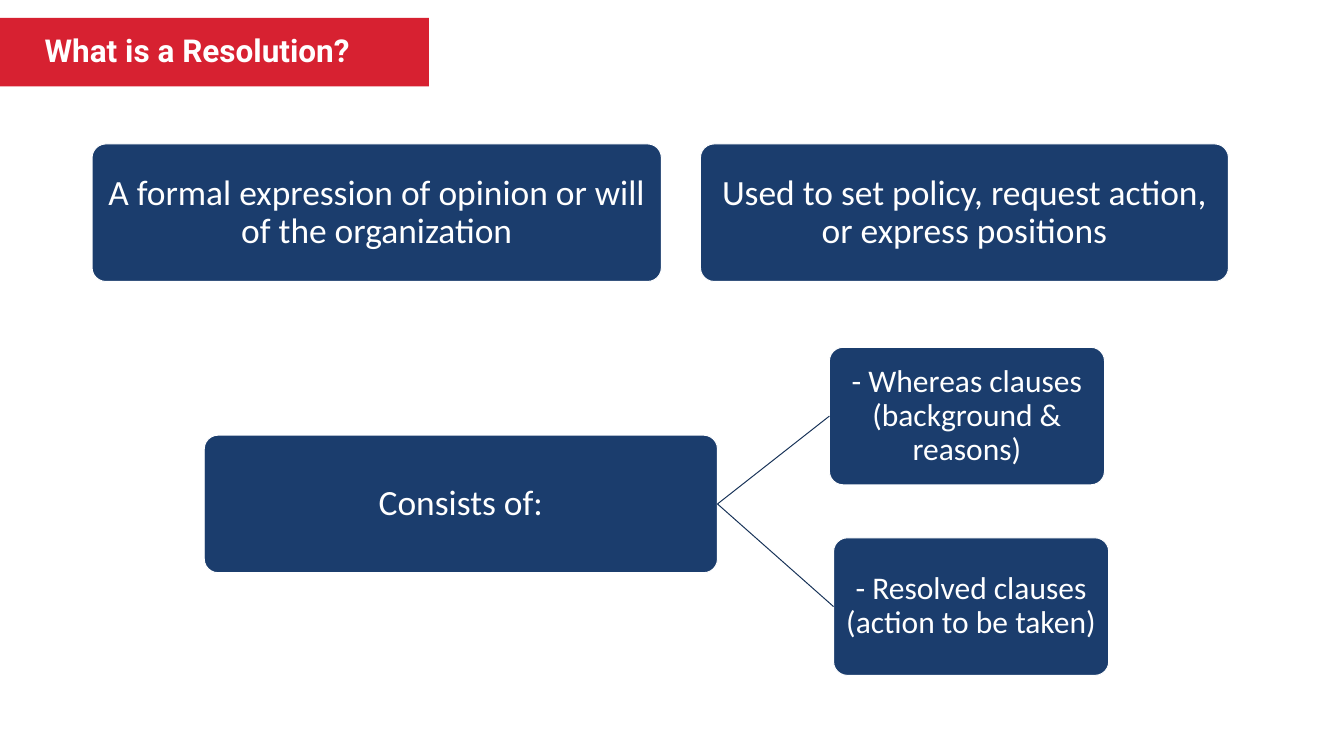
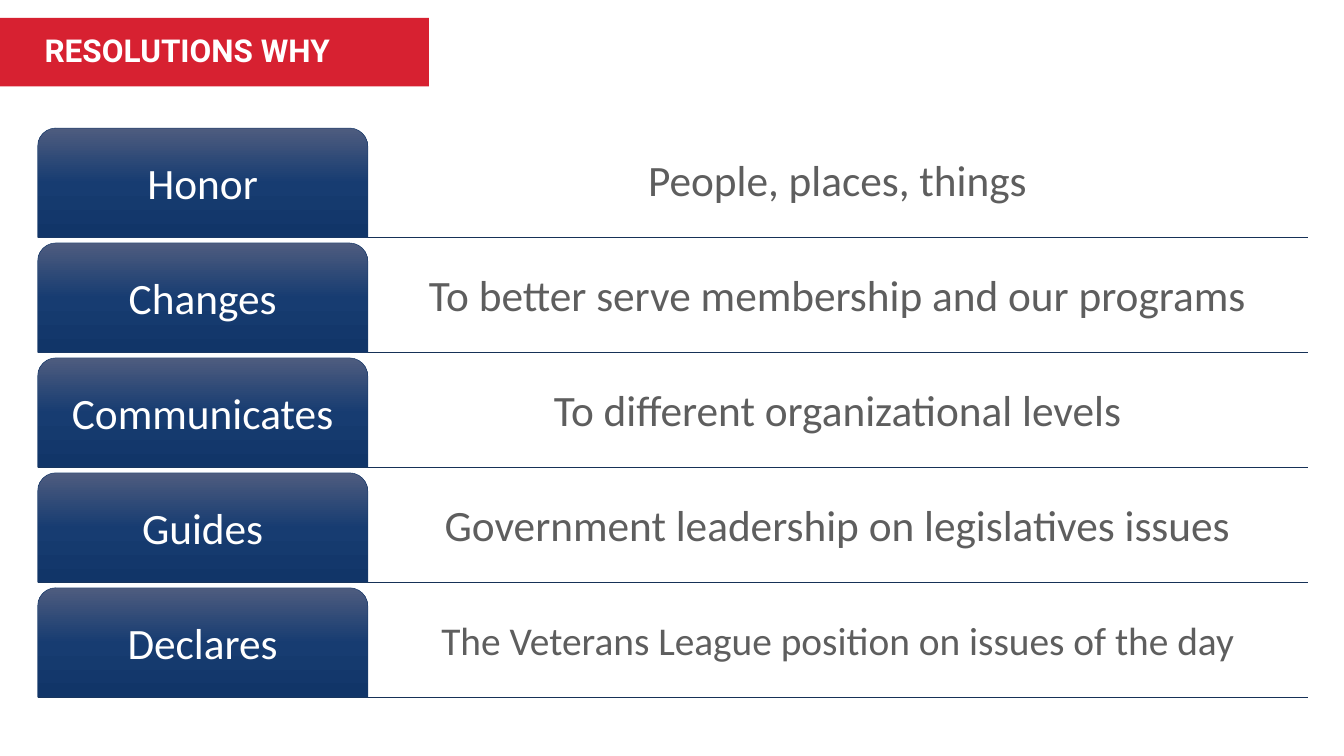
from collections import namedtuple
from copy import deepcopy

from lxml.etree import SubElement
from pptx import Presentation
from pptx.dml.color import RGBColor
from pptx.enum.shapes import MSO_CONNECTOR, MSO_SHAPE
from pptx.enum.text import MSO_ANCHOR, PP_ALIGN
from pptx.oxml.ns import qn
from pptx.util import Cm, Pt

RED = RGBColor(0xD7, 0x21, 0x31)
NAVY = RGBColor(0x1B, 0x3D, 0x6D)
LINE_NAVY = RGBColor(0x16, 0x31, 0x57)
GRAY = RGBColor(0x5E, 0x5E, 0x5E)
WHITE = RGBColor(0xFF, 0xFF, 0xFF)
TAB_GRADIENT = (
    (0, RGBColor(0x4E, 0x5C, 0x7F)),
    (0.5, RGBColor(0x17, 0x3C, 0x71)),
    (1, RGBColor(0x11, 0x35, 0x68)),
)

Box = namedtuple("Box", "left top width height")

SLIDE_WIDTH, SLIDE_HEIGHT = 48.16, 27.1
TITLE_BAND = Box(0, 0.64, 15.37, 2.46)
STATEMENTS_AREA = Box(3.3, 5.16, 40.72, 4.93)
BREAKDOWN_AREA = Box(7.32, 12.45, 32.41, 11.76)
REASONS_AREA = Box(1.35, 4.59, 45.51, 20.4)

CARD_HEIGHT = 4.93
CARD_MARGIN = 0.06
ROW_GAP = 0.2
TAB_WIDTH = 11.83
ROW_MARGIN = 0.23

TITLE_FONT = {"name": "Roboto", "size": Pt(32), "bold": True}
BODY_FONT = {"name": "Calibri", "bold": False}

REASONS = (
    ("Honor", "People, places, things", 44),
    ("Changes", "To better serve membership and our programs", 44),
    ("Communicates", "To different organizational levels", 44),
    ("Guides", "Government leadership on legislatives issues", 44),
    ("Declares", "The Veterans League position on issues of the day", 40),
)


def apply_format(target, values):
    for attribute, value in values.items():
        setattr(target, attribute, value)


def place(box):
    return [Cm(length) for length in box]


def write(shape, text, font, color, margin, align=PP_ALIGN.CENTER):
    frame = shape.text_frame
    apply_format(frame, {
        "word_wrap": True,
        "vertical_anchor": MSO_ANCHOR.MIDDLE,
        "margin_left": Cm(margin),
        "margin_right": Cm(margin),
        "margin_top": Cm(min(margin, ROW_MARGIN)),
        "margin_bottom": Cm(min(margin, ROW_MARGIN)),
    })
    paragraph = frame.paragraphs[0]
    apply_format(paragraph, {"text": text, "alignment": align, "line_spacing": 0.9})
    apply_format(paragraph.font, font)
    paragraph.font.color.rgb = color


def add_block(slide, preset, box, adjustments=()):
    block = slide.shapes.add_shape(preset, *place(box))
    block.shadow.inherit = False
    for index, value in enumerate(adjustments):
        block.adjustments[index] = value
    return block


def add_rule(slide, start, end, width):
    rule = slide.shapes.add_connector(
        MSO_CONNECTOR.STRAIGHT, *place(start), *place(end))
    rule.line.color.rgb = LINE_NAVY
    rule.line.width = Pt(width)
    SubElement(rule._element.spPr, qn("a:effectLst"))
    return rule


def add_title(slide, title, box):
    band = add_block(slide, MSO_SHAPE.RECTANGLE, box)
    band.fill.solid()
    band.fill.fore_color.rgb = RED
    band.line.fill.background()
    write(band, title, TITLE_FONT, WHITE, 1.6, PP_ALIGN.LEFT)


def add_card(slide, text, size, box):
    card = add_block(slide, MSO_SHAPE.ROUNDED_RECTANGLE, box, (0.1,))
    card.fill.solid()
    card.fill.fore_color.rgb = NAVY
    card.line.color.rgb = WHITE
    card.line.width = Pt(1)
    write(card, text, {**BODY_FONT, "size": Pt(size)}, WHITE, CARD_MARGIN)
    return card


def add_statements(slide, area):
    gap, opinion_width = 1.4, 20.4
    policy_left = opinion_width + gap
    add_card(slide, "A formal expression of opinion or will of the organization", 36,
             area._replace(width=opinion_width))
    add_card(slide, "Used to set policy, request action, or express positions", 36,
             area._replace(left=area.left + policy_left, width=area.width - policy_left))


def add_breakdown(slide, area):
    clause_width = 9.86
    clause_left = area.left + area.width - clause_width
    resolved_top = area.top + area.height - CARD_HEIGHT
    whole = add_card(slide, "Consists of:", 36,
                     Box(area.left, area.top + 3.15, 18.39, CARD_HEIGHT))
    clauses = (
        ("- Whereas clauses (background & reasons)", clause_left - 0.15, area.top),
        ("- Resolved clauses (action to be taken)", clause_left, resolved_top),
    )
    for text, left, top in clauses:
        clause = add_card(slide, text, 32, Box(left, top, clause_width, CARD_HEIGHT))
        branch = add_rule(slide, (0, 0), (1, 1), 1)
        branch.begin_connect(whole, 3)
        branch.end_connect(clause, 1)


def fill_tab(tab):
    tab.fill.gradient()
    tab.fill.gradient_angle = 270
    stop_list = tab._element.spPr.find(qn("a:gradFill")).find(qn("a:gsLst"))
    stop_list.append(deepcopy(stop_list[0]))
    for stop, (position, color) in zip(tab.fill.gradient_stops, TAB_GRADIENT):
        stop.position = position
        stop.color.rgb = color


def add_reason(slide, purpose, detail, detail_size, row):
    bottom = row.top + row.height
    add_rule(slide, (row.left, bottom), (row.left + row.width, bottom), 0.5)
    detail_box = row._replace(left=row.left + TAB_WIDTH, width=row.width - TAB_WIDTH)
    explanation = slide.shapes.add_textbox(*place(detail_box))
    write(explanation, detail, {**BODY_FONT, "size": Pt(detail_size)}, GRAY, ROW_MARGIN)
    tab = add_block(slide, MSO_SHAPE.ROUND_2_SAME_RECTANGLE,
                    row._replace(width=TAB_WIDTH), (0.167, 0))
    fill_tab(tab)
    tab.line.color.rgb = NAVY
    tab.line.width = Pt(0.5)
    write(tab, purpose, {**BODY_FONT, "size": Pt(44)}, WHITE, ROW_MARGIN)


def add_reasons(slide, area):
    pitch = (area.height + ROW_GAP) / len(REASONS)
    for index, (purpose, detail, detail_size) in enumerate(REASONS):
        row = area._replace(top=area.top + index * pitch, height=pitch - ROW_GAP)
        add_reason(slide, purpose, detail, detail_size, row)


def new_slide(presentation, title):
    slide = presentation.slides.add_slide(presentation.slide_layouts[6])
    add_title(slide, title, TITLE_BAND)
    return slide


def main():
    presentation = Presentation()
    presentation.slide_width = Cm(SLIDE_WIDTH)
    presentation.slide_height = Cm(SLIDE_HEIGHT)

    definition = new_slide(presentation, "What is a Resolution?")
    add_statements(definition, STATEMENTS_AREA)
    add_breakdown(definition, BREAKDOWN_AREA)

    purposes = new_slide(presentation, "RESOLUTIONS WHY")
    add_reasons(purposes, REASONS_AREA)

    presentation.save("out.pptx")


if __name__ == "__main__":
    main()
